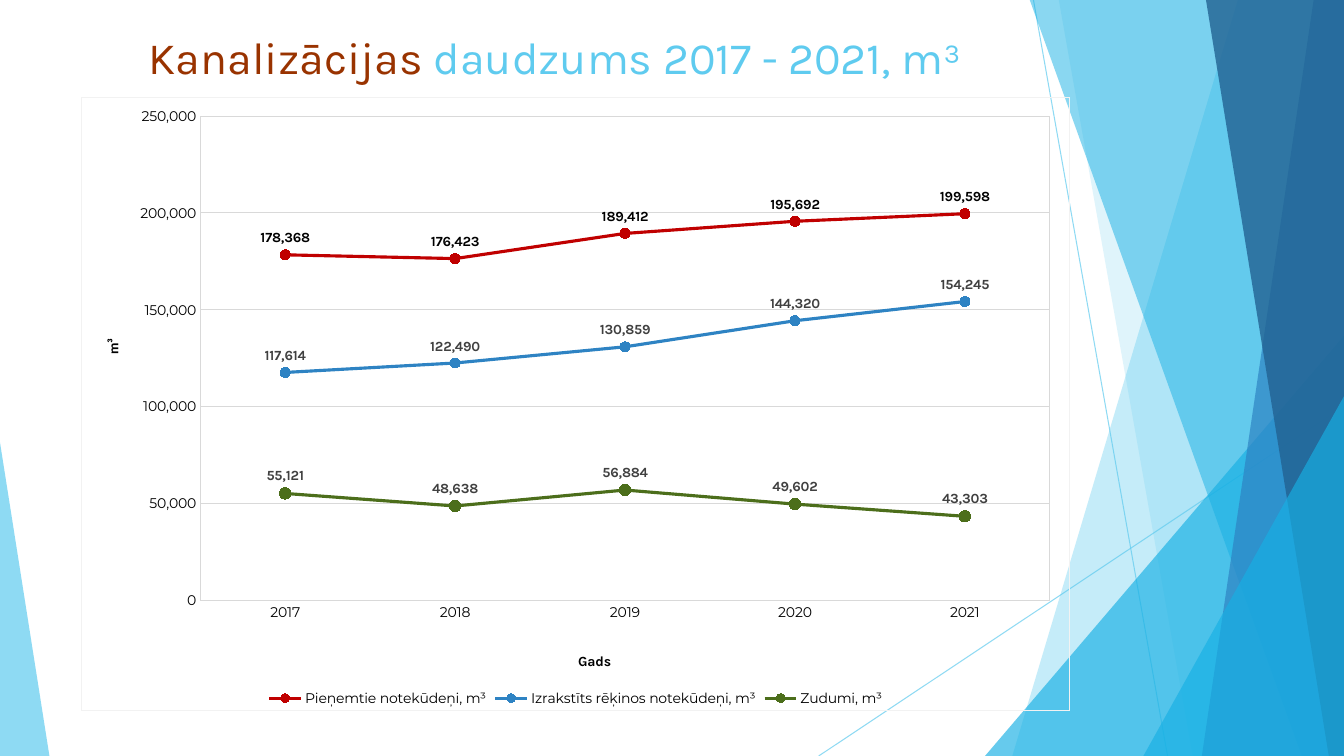
from dataclasses import dataclass
from typing import Any

from lxml import etree
from pptx import Presentation
from pptx.chart.data import CategoryChartData
from pptx.dml.color import RGBColor
from pptx.enum.chart import (XL_CHART_TYPE, XL_LABEL_POSITION, XL_LEGEND_POSITION,
                             XL_MARKER_STYLE, XL_TICK_MARK)
from pptx.enum.shapes import MSO_CONNECTOR, MSO_SHAPE
from pptx.enum.text import MSO_ANCHOR, MSO_AUTO_SIZE, PP_ALIGN
from pptx.oxml import parse_xml
from pptx.oxml.ns import nsdecls, qn
from pptx.util import Emu, Pt

PX = 9144  # EMU per px, 100 px to the inch
LINE_MARKERS = XL_CHART_TYPE.LINE_MARKERS
ABOVE = XL_LABEL_POSITION.ABOVE
BOTTOM = XL_LEGEND_POSITION.BOTTOM
CIRCLE = XL_MARKER_STYLE.CIRCLE
NO_TICK = XL_TICK_MARK.NONE
STRAIGHT = MSO_CONNECTOR.STRAIGHT
TRIANGLE = MSO_SHAPE.ISOSCELES_TRIANGLE


@dataclass(frozen=True)
class Theme:
    sky: str = "5FCBEF"
    cyan: str = "17B0E4"
    blue: str = "2E83C3"
    navy: str = "226292"
    rust: str = "993300"
    red: str = "C00000"
    green: str = "4C6E1B"
    black: str = "000000"
    dark: str = "404040"
    grid: str = "D9D9D9"
    border: str = "F2F2F2"
    white: str = "FFFFFF"
    heading: str = "Karla"
    body: str = "Montserrat"
    unit: str = "Calibri"
    title_size: int = 32
    chart_size: int = 10


THEME = Theme()


@dataclass(frozen=True)
class Ray:
    start: tuple[int, int]
    end: tuple[int, int]


@dataclass(frozen=True)
class Facet:
    points: tuple[tuple[int, int], ...]
    color: str
    opacity: int


@dataclass(frozen=True)
class Wedge:
    box: tuple[int, int, int, int]
    apex: float
    color: str
    opacity: int


@dataclass(frozen=True)
class Flow:
    name: str
    values: tuple[int, ...]
    color: str
    marker_size: int
    label_color: str


DECORATIONS: tuple[Ray | Facet | Wedge, ...] = (
    Ray((1025, 0), (1158, 750)),
    Ray((1333, 403), (812, 750)),
    Facet(((1228, -1), (1333, -1), (1333, 750), (1004, 750)), THEME.sky, 36),
    Facet(((1050, -1), (1333, -1), (1333, 750), (1183, 750)), THEME.sky, 20),
    Wedge((977, 333, 356, 417), 1, THEME.cyan, 66),
    Facet(((1021, -1), (1333, -1), (1333, 750), (1291, 750)), THEME.cyan, 50),
    Facet(((1303, -1), (1333, -1), (1333, 750), (1192, 750)), THEME.blue, 70),
    Facet(((1196, -1), (1333, -1), (1333, 750), (1318, 750)), THEME.navy, 80),
    Wedge((1134, 393, 199, 357), 1, THEME.cyan, 66),
    Wedge((0, 439, 49, 311), 0, THEME.sky, 70),
)
YEARS = ("2017", "2018", "2019", "2020", "2021")
FLOWS = (
    Flow("Pieņemtie notekūdeņi, m³", (178368, 176423, 189412, 195692, 199598),
         THEME.red, 7, THEME.black),
    Flow("Izrakstīts rēķinos notekūdeņi, m³", (117614, 122490, 130859, 144320, 154245),
         THEME.blue, 7, THEME.dark),
    Flow("Zudumi, m³", (55121, 48638, 56884, 49602, 43303),
         THEME.green, 8, THEME.dark),
)
TITLE_SPANS = (("Kanalizācijas", THEME.rust), (" daudzums 2017 - 2021, m³", THEME.sky))
TITLE_BOX = (81, 24, 940, 144)
CHART_BOX = (81, 97, 980, 608)


def emu(*lengths: int) -> list[Emu]:
    return [Emu(length * PX) for length in lengths]


def apply(target: Any, values: dict[str, Any]) -> None:
    for name, value in values.items():
        setattr(target, name, value)


def style_font(font: Any, name: str, color: str = THEME.black,
               size: int = THEME.chart_size, bold: bool = False) -> None:
    apply(font, {"name": name, "size": Pt(size), "bold": bold})
    font.color.rgb = RGBColor.from_string(color)


def paint_fill(fill: Any, color: str) -> None:
    fill.solid()
    fill.fore_color.rgb = RGBColor.from_string(color)


def style_line(line: Any, color: str, width: float) -> None:
    paint_fill(line.fill, color)
    line.width = Pt(width)


def set_opacity(shape: Any, percent: int) -> None:
    for color in shape._element.spPr.iter(qn("a:srgbClr")):
        etree.SubElement(color, qn("a:alpha")).set("val", str(percent * 1000))


def draw_decoration(page: Any, item: Ray | Facet | Wedge) -> None:
    if isinstance(item, Ray):
        ray = page.shapes.add_connector(STRAIGHT, *emu(*item.start, *item.end))
        style_line(ray.line, THEME.sky, 0.75)
        set_opacity(ray, 70)
        etree.SubElement(ray._element.spPr, qn("a:effectLst"))
        return
    if isinstance(item, Facet):
        builder = page.shapes.build_freeform(*item.points[0], scale=PX)
        builder.add_line_segments(item.points[1:], close=True)
        shape = builder.convert_to_shape()
    else:
        shape = page.shapes.add_shape(TRIANGLE, *emu(*item.box))
        shape.adjustments[0] = item.apex
    paint_fill(shape.fill, item.color)
    shape.line.fill.background()
    shape.shadow.inherit = False
    set_opacity(shape, item.opacity)


def write_title(page: Any) -> None:
    title = page.shapes.title
    apply(title, dict(zip(("left", "top", "width", "height"), emu(*TITLE_BOX))))
    apply(title.text_frame, {"word_wrap": True, "auto_size": MSO_AUTO_SIZE.NONE,
                             "vertical_anchor": MSO_ANCHOR.TOP})
    para = title.text_frame.paragraphs[0]
    para.alignment = PP_ALIGN.CENTER
    for text, color in TITLE_SPANS:
        span = para.add_run()
        span.text = text
        style_font(span.font, THEME.heading, color, THEME.title_size)
    title._element.getparent().append(title._element)  # in front of the decorations


def place(element: Any, index: int, **fractions: float) -> None:
    """Give a chart part a manual layout, in fractions of the chart."""
    for old in element.findall(qn("c:layout")):
        element.remove(old)
    target = '<c:layoutTarget val="inner"/>' if "w" in fractions else ""
    modes = "".join(f'<c:{side}Mode val="edge"/>' for side in "xy")
    sizes = "".join(f'<c:{side} val="{value}"/>' for side, value in fractions.items())
    element.insert(index, parse_xml(
        f'<c:layout {nsdecls("c")}><c:manualLayout>{target}{modes}{sizes}'
        '</c:manualLayout></c:layout>'))


def area_format(fill: str, color: str, width: int) -> Any:
    return parse_xml(f'<c:spPr {nsdecls("c", "a")}>{fill}<a:ln w="{width}"><a:solidFill>'
                     f'<a:srgbClr val="{color}"/></a:solidFill></a:ln></c:spPr>')


def style_axis(axis: Any, title: str, font: str, x: float, y: float) -> None:
    apply(axis, {"major_tick_mark": NO_TICK, "minor_tick_mark": NO_TICK})
    style_font(axis.tick_labels.font, THEME.body)
    frame = axis.axis_title.text_frame
    frame.text = title
    style_font(frame.paragraphs[0].runs[0].font, font, bold=True)
    place(axis.axis_title._element, 1, x=x, y=y)


def style_series(series: Any, flow: Flow) -> None:
    series.smooth = False
    style_line(series.format.line, flow.color, 2.25)
    apply(series.marker, {"style": CIRCLE, "size": flow.marker_size})
    paint_fill(series.marker.format.fill, flow.color)
    style_line(series.marker.format.line, flow.color, 0.75)
    labels = series.data_labels
    apply(labels, {"show_value": True, "position": ABOVE, "number_format": "#,##0",
                   "number_format_is_linked": False})
    style_font(labels.font, THEME.heading, flow.label_color, bold=True)


def draw_chart(page: Any) -> None:
    data = CategoryChartData(number_format="#,##0")
    data.categories = YEARS
    for flow in FLOWS:
        data.add_series(flow.name, flow.values)
    chart = page.shapes.add_chart(LINE_MARKERS, *emu(*CHART_BOX), data).chart
    apply(chart, {"has_title": False, "has_legend": True})
    style_font(chart.font, THEME.heading)
    apply(chart.legend, {"position": BOTTOM, "include_in_layout": False})
    style_font(chart.legend.font, THEME.body)
    chart.plots[0].vary_by_categories = False
    for series, flow in zip(chart.plots[0].series, FLOWS):
        style_series(series, flow)

    years, volume = chart.category_axis, chart.value_axis
    style_axis(years, "Gads", THEME.heading, 0.5, 0.9)
    style_line(years.format.line, THEME.grid, 0.75)
    style_axis(volume, "m³", THEME.unit, 0.02, 0.39)
    apply(volume, {"minimum_scale": 0, "maximum_scale": 250000, "major_unit": 50000})
    apply(volume.tick_labels, {"number_format": "#,##0", "number_format_is_linked": False})
    volume.format.line.fill.background()
    style_line(volume.major_gridlines.format.line, THEME.grid, 0.75)

    body = chart._chartSpace.find(qn("c:chart"))
    body.addnext(area_format("<a:noFill/>", THEME.border, 0))
    plot_area = body.find(qn("c:plotArea"))
    place(plot_area, 0, x=0.12, y=0.03, w=0.86, h=0.79)
    white = f'<a:solidFill><a:srgbClr val="{THEME.white}"/></a:solidFill>'
    plot_area.append(area_format(white, THEME.grid, Pt(0.75)))


def main() -> None:
    deck = Presentation()
    deck.slide_width, deck.slide_height = emu(1333, 750)
    page = deck.slides.add_slide(deck.slide_layouts.get_by_name("Title Only"))
    for item in DECORATIONS:
        draw_decoration(page, item)
    write_title(page)
    draw_chart(page)
    deck.save("out.pptx")


if __name__ == "__main__":
    main()
